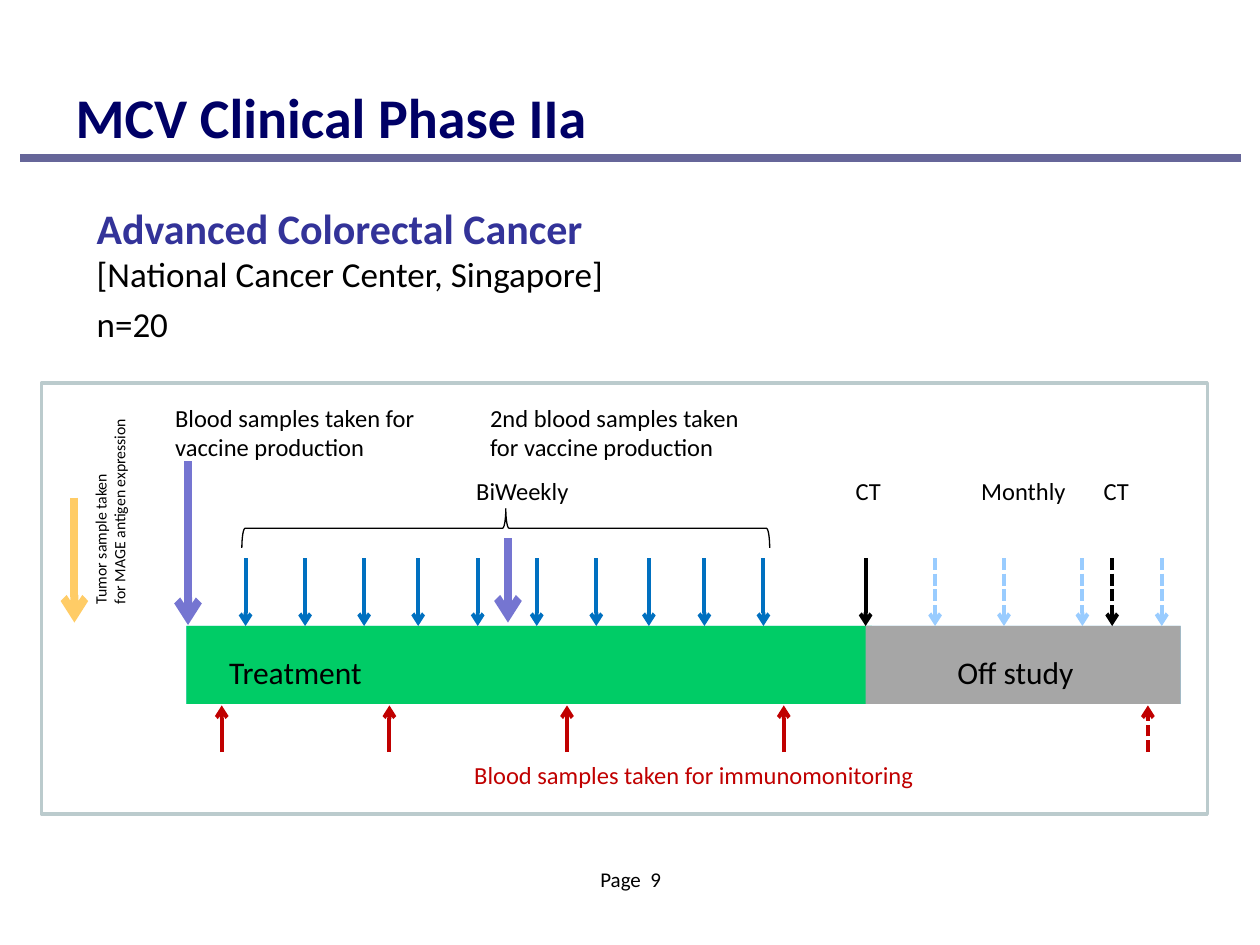
from pptx import Presentation
from pptx.dml.color import RGBColor as RGB
from pptx.enum.dml import MSO_LINE as Dash
from pptx.enum.shapes import MSO_CONNECTOR as Link, MSO_SHAPE as Form
from pptx.enum.text import MSO_ANCHOR as Anchor, PP_ALIGN as Align
from pptx.oxml.ns import qn
from pptx.util import Cm, Pt
from lxml.etree import SubElement as Sub

INK = {
    "black": "000000", "title": "000066", "head": "333399", "rule": "666699",
    "blue": "0070C0", "pale": "99CCFF", "violet": "7575D1", "gold": "FFCC66",
    "red": "C00000", "sky": "66CCFF", "green": "00CC66", "gray": "A6A6A6",
    "frame": "BBCBCD",
}


class Board:
    """Hold the text style and the current slide."""

    def __init__(self, slide, font="Calibri"):
        self.slide, self.font = slide, font

    def tint(self, ink):
        return RGB.from_string(INK[ink])

    def fill_text(self, frame, rows, align=Align.LEFT, anchor=Anchor.TOP):
        frame.word_wrap = True
        frame.vertical_anchor = anchor
        for i, (words, size, ink, bold) in enumerate(rows):
            para = frame.add_paragraph() if i else frame.paragraphs[0]
            para.alignment = align
            run = para.add_run()
            run.text = words
            run.font.name, run.font.size, run.font.bold = self.font, Pt(size), bold
            run.font.color.rgb = self.tint(ink)

    def title(self, box, words):
        shape = self.slide.shapes.title
        shape.left, shape.top, shape.width, shape.height = map(Cm, box)
        self.fill_text(shape.text_frame, [(words, 32, "title", True)],
                       anchor=Anchor.MIDDLE)

    def text(self, box, rows, align=Align.LEFT, anchor=Anchor.TOP, turn=0):
        shape = self.slide.shapes.add_textbox(*map(Cm, box))
        shape.rotation = turn
        self.fill_text(shape.text_frame, rows, align, anchor)

    def label(self, box, words, size=14, ink="black", align=Align.LEFT):
        self.text(box, [(words, size, ink, False)], align)

    def shape(self, box, fill=None, line=None, width=1, form=Form.RECTANGLE, turn=0):
        shape = self.slide.shapes.add_shape(form, *map(Cm, box))
        shape.shadow.inherit = False
        shape.rotation = turn
        if fill:
            shape.fill.solid()
            shape.fill.fore_color.rgb = self.tint(fill)
        else:
            shape.fill.background()
        if line:
            shape.line.color.rgb = self.tint(line)
            shape.line.width = Pt(width)
        else:
            shape.line.fill.background()

    def line(self, start, end, ink, width=2.25, dash=False, head=True):
        link = self.slide.shapes.add_connector(Link.STRAIGHT, *map(Cm, start + end))
        link.line.color.rgb = self.tint(ink)
        link.line.width = Pt(width)
        if dash:
            link.line.dash_style = Dash.SQUARE_DOT
        props = link._element.spPr
        if head:
            Sub(props.find(qn("a:ln")), qn("a:tailEnd"), type="arrow")
        Sub(props, qn("a:effectLst"))

    def arrows(self, spots, top, end, ink, width=2.25, dash=False):
        for x in spots:
            self.line((x, top), (x, end), ink, width, dash)


def main():
    """Build the trial timeline slide."""
    deck = Presentation()
    deck.slide_width, deck.slide_height = Cm(25.4), Cm(19.05)
    board = Board(deck.slides.add_slide(deck.slide_layouts[5]))

    board.title((1.27, 0.76, 22.86, 3.18), "MCV Clinical Phase IIa")
    board.line((0.41, 3.18), (25.02, 3.18), "rule", 4.5, head=False)
    board.text((1.7, 3.61, 20.6, 2.79), [
        ("Advanced Colorectal Cancer", 24, "head", True),
        ("[National Cancer Center, Singapore]", 20, "black", False),
    ], anchor=Anchor.MIDDLE)
    board.text((1.7, 5.92, 20.6, 1.22), [("n=20", 20, "black", False)],
               anchor=Anchor.MIDDLE)

    top, tall, high = 12.62, 1.57, 11.25
    for left, wide, fill in ((3.76, 20.04, "sky"), (3.76, 13.82, "green"),
                             (17.45, 6.35, "gray")):
        board.shape((left, top, wide, tall), fill)
    board.shape((0.84, 7.72, 23.5, 8.69), line="frame", width=2)
    board.label((4.37, 13.03, 5.94, 1.02), "Treatment", 18)
    board.label((19.05, 13.03, 3.18, 1.02), "Off study", 18)

    doses = (4.95, 6.15, 7.34, 8.43, 9.63, 10.82, 12.02, 13.08, 14.2, 15.39)
    board.arrows(doses, high, top, "blue")
    board.arrows((18.85, 20.24, 21.82, 23.42), high, top, "pale", dash=True)
    board.arrows((17.45,), high, top, "black")
    board.arrows((22.42,), high, top, "black", dash=True)
    board.arrows((4.47, 7.85, 11.43, 15.8), 15.16, 14.22, "red")
    board.arrows((23.14,), 15.16, 14.22, "red", dash=True)
    for x, start, end, ink in ((3.79, 9.3, 12.6, "violet"), (10.24, 10.85, 12.55, "violet"),
                               (1.5, 10.03, 12.55, "gold")):
        board.arrows((x,), start, end, ink, 4.5)
    board.shape((9.8, 5.33, 0.79, 10.64), line="black", width=0.75,
                form=Form.LEFT_BRACE, turn=90)

    board.label((3.28, 8, 5.69, 1.45), "Blood samples taken for vaccine production")
    board.label((9.63, 8, 5.69, 1.45), "2nd blood samples taken for vaccine production")
    for left, wide, words in ((9.35, 3, "BiWeekly"), (17, 1.5, "CT"),
                              (19.53, 2.5, "Monthly"), (22, 1.5, "CT")):
        board.label((left, 9.47, wide, 0.86), words)
    board.label((8.81, 15.19, 10.36, 0.86), "Blood samples taken for immunomonitoring",
                ink="red", align=Align.CENTER)
    board.text((0.03, 9.73, 4.37, 1.02), [
        (words, 9, "black", False)
        for words in ("Tumor sample taken", "for MAGE antigen expression")
    ], turn=270)
    board.label((8.69, 17.35, 8.05, 1.32), "Page  9", 12, align=Align.CENTER)
    deck.save("out.pptx")


if __name__ == "__main__":
    main()
